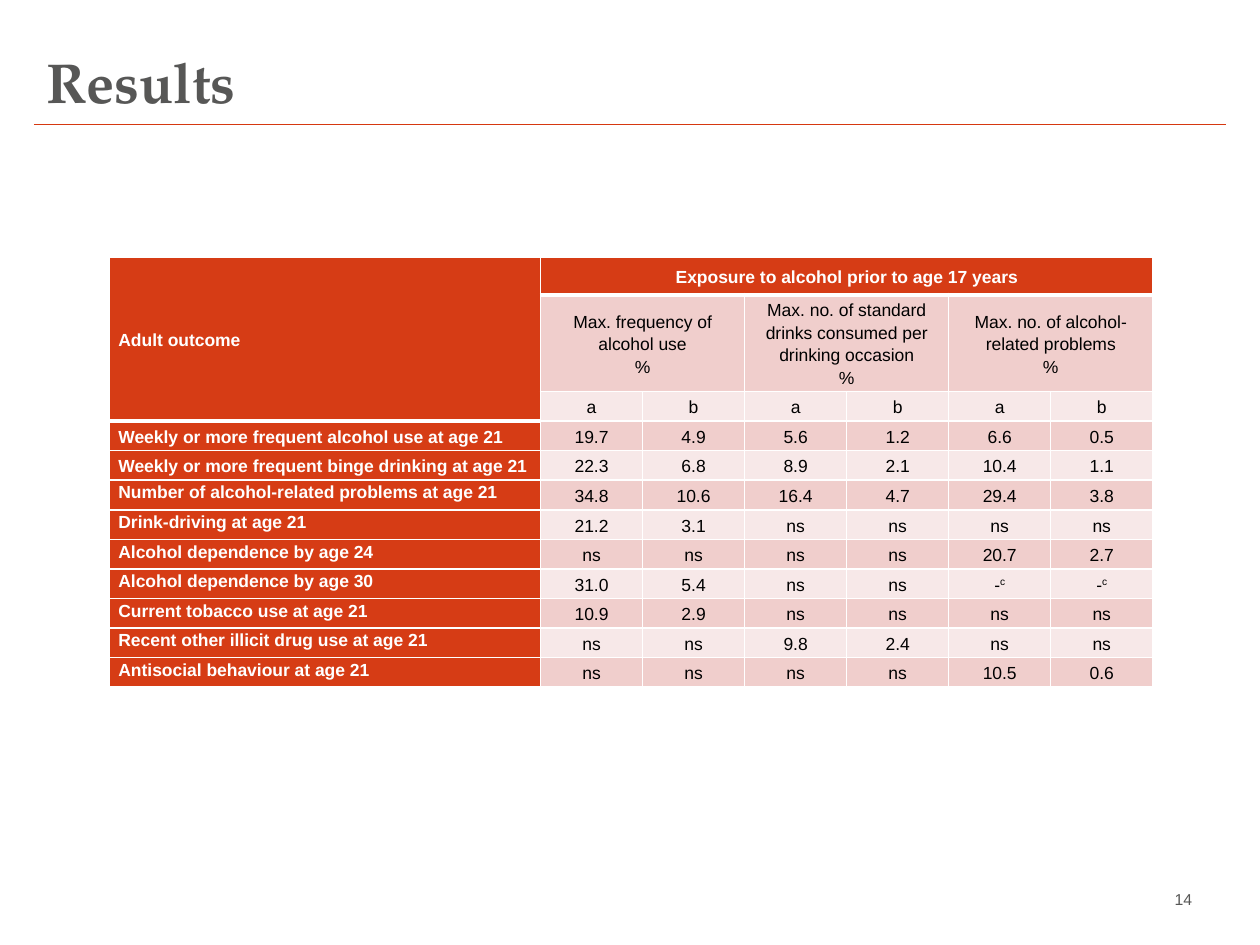
from pptx import Presentation
from pptx.dml.color import RGBColor
from pptx.enum.shapes import MSO_CONNECTOR
from pptx.enum.text import MSO_ANCHOR, PP_ALIGN
from pptx.oxml.ns import qn
from pptx.util import Inches, Pt
from lxml.etree import SubElement

COLORS = {"rule": "D63810", "header": "D63C15", "dark": "F0CECC", "light": "F7E8E8",
          "gray": "575756", "white": "FFFFFF", "black": "000000"}
GROUPS = ["Max. frequency of alcohol use",
          "Max. no. of standard drinks consumed per drinking occasion",
          "Max. no. of alcohol-related problems"]
OUTCOMES = [
    ("Weekly or more frequent alcohol use at age 21", "19.7 4.9 5.6 1.2 6.6 0.5"),
    ("Weekly or more frequent binge drinking at age 21", "22.3 6.8 8.9 2.1 10.4 1.1"),
    ("Number of alcohol-related problems at age 21", "34.8 10.6 16.4 4.7 29.4 3.8"),
    ("Drink-driving at age 21", "21.2 3.1 ns ns ns ns"),
    ("Alcohol dependence by age 24", "ns ns ns ns 20.7 2.7"),
    ("Alcohol dependence by age 30", "31.0 5.4 ns ns -^c -^c"),
    ("Current tobacco use at age 21", "10.9 2.9 ns ns ns ns"),
    ("Recent other illicit drug use at age 21", "ns ns 9.8 2.4 ns ns"),
    ("Antisocial behaviour at age 21", "ns ns ns ns 10.5 0.6"),
]


class SlideBuilder:
    """Holds the style and the current slide, and adds each kind of element."""

    def __init__(self, deck):
        self.page = deck.slides.add_slide(deck.slide_layouts[5])
        self.body_font = "Arial"
        self.title_font = "TeX Gyre Pagella"

    def place(self, shape, left, top, width, height):
        values = {"left": left, "top": top, "width": width, "height": height}
        for name, value in values.items():
            setattr(shape, name, Inches(value))

    def style(self, font, name, size, color, bold=False):
        for key, value in {"name": name, "size": Pt(size), "bold": bold}.items():
            setattr(font, key, value)
        font.color.rgb = RGBColor.from_string(COLORS[color])

    def title(self, text):
        box = self.page.shapes.title
        self.place(box, 0.27, 0.3, 9.45, 0.69)
        frame = box.text_frame
        frame.vertical_anchor = MSO_ANCHOR.MIDDLE
        para = frame.paragraphs[0]
        para.alignment = PP_ALIGN.LEFT
        span = para.add_run()
        span.text = text
        self.style(span.font, self.title_font, 32, "gray", True)

    def rule(self, left, right, top):
        line = self.page.shapes.add_connector(
            MSO_CONNECTOR.STRAIGHT, Inches(left), Inches(top), Inches(right), Inches(top))
        line.line.color.rgb = RGBColor.from_string(COLORS["rule"])
        line.line.width = Pt(0.75)
        SubElement(line._element.spPr, qn("a:effectLst"))

    def page_number(self, text):
        box = self.page.shapes.add_textbox(0, 0, 0, 0)
        self.place(box, 7.99, 6.98, 1.57, 0.31)
        frame = box.text_frame
        frame.word_wrap = True
        frame.vertical_anchor = MSO_ANCHOR.MIDDLE
        para = frame.paragraphs[0]
        para.alignment = PP_ALIGN.RIGHT
        span = para.add_run()
        span.text = text
        self.style(span.font, self.body_font, 9, "gray")

    def table(self, widths, heights):
        frame = self.page.shapes.add_table(
            len(heights), len(widths), Inches(0.87), Inches(2.04),
            sum(widths), sum(heights))
        table = frame.table
        for column, width in zip(table.columns, widths):
            column.width = width
        for row, height in zip(table.rows, heights):
            row.height = height
        return table

    def borders(self, cell, top, bottom):
        properties = cell._tc.get_or_add_tcPr()
        for side, points in {"L": 1, "R": 1, "T": top, "B": bottom}.items():
            line = SubElement(properties, qn(f"a:ln{side}"), w=str(Pt(points)))
            fill = SubElement(line, qn("a:solidFill"))
            SubElement(fill, qn("a:srgbClr"), val=COLORS["white"])

    def cell(self, cell, fill, top=1, bottom=1, side=0.07, anchor=MSO_ANCHOR.MIDDLE):
        self.borders(cell, top, bottom)
        cell.fill.solid()
        cell.fill.fore_color.rgb = RGBColor.from_string(COLORS[fill])
        values = {"margin_left": Inches(side), "margin_right": Inches(side),
                  "margin_top": 0, "margin_bottom": 0, "vertical_anchor": anchor}
        for name, value in values.items():
            setattr(cell, name, value)

    def cell_text(self, cell, lines, align=PP_ALIGN.CENTER, color="black", bold=False):
        frame = cell.text_frame
        for index, text in enumerate(lines):
            para = frame.add_paragraph() if index else frame.paragraphs[0]
            para.alignment = align
            para.line_spacing = 1.15
            for level, part in enumerate(text.split("^")):
                span = para.add_run()
                span.text = part
                self.style(span.font, self.body_font, 10, color, bold)
                if level:
                    span._r.get_or_add_rPr().set("baseline", "30000")

    def results(self):
        lower_rows = len(OUTCOMES) + 1
        heights = [Inches(0.3), Inches(0.71)] + [Inches(2.35 / lower_rows)] * lower_rows
        table = self.table([Inches(3.42)] + [Inches(0.81)] * 6, heights)
        for row in range(len(heights)):
            for column in range(7):
                label = column == 0
                fill = "header" if label or row == 0 else "dark" if row % 2 else "light"
                self.cell(
                    table.cell(row, column), fill,
                    top=3 if row == (3 if label else 1) else 1,
                    bottom=3 if (row in (0, 2) if label else row == 0) else 1,
                    side=0 if column == 6 and row > 1 else 0.07,
                    anchor=MSO_ANCHOR.TOP if label and row > 4 else MSO_ANCHOR.MIDDLE)

        table.cell(0, 0).merge(table.cell(2, 0))
        table.cell(0, 1).merge(table.cell(0, 6))
        header = {"color": "white", "bold": True}
        self.cell_text(table.cell(0, 0), ["Adult outcome"], PP_ALIGN.LEFT, **header)
        self.cell_text(table.cell(0, 1), ["Exposure to alcohol prior to age 17 years"], **header)
        for index, group in enumerate(GROUPS):
            column = 1 + 2 * index
            table.cell(1, column).merge(table.cell(1, column + 1))
            self.cell_text(table.cell(1, column), [group, "%"])
            for offset, letter in enumerate("ab"):
                self.cell_text(table.cell(2, column + offset), [letter])
        for row, (outcome, values) in enumerate(OUTCOMES, 3):
            self.cell_text(table.cell(row, 0), [outcome], PP_ALIGN.LEFT, **header)
            for column, value in enumerate(values.split(), 1):
                self.cell_text(table.cell(row, column), [value])


def main():
    deck = Presentation()
    deck.slide_width = Inches(10)
    deck.slide_height = Inches(7.5)
    builder = SlideBuilder(deck)
    builder.rule(0.27, 9.73, 0.99)
    builder.page_number("14")
    builder.title("Results")
    builder.results()
    deck.save("out.pptx")


if __name__ == "__main__":
    main()
